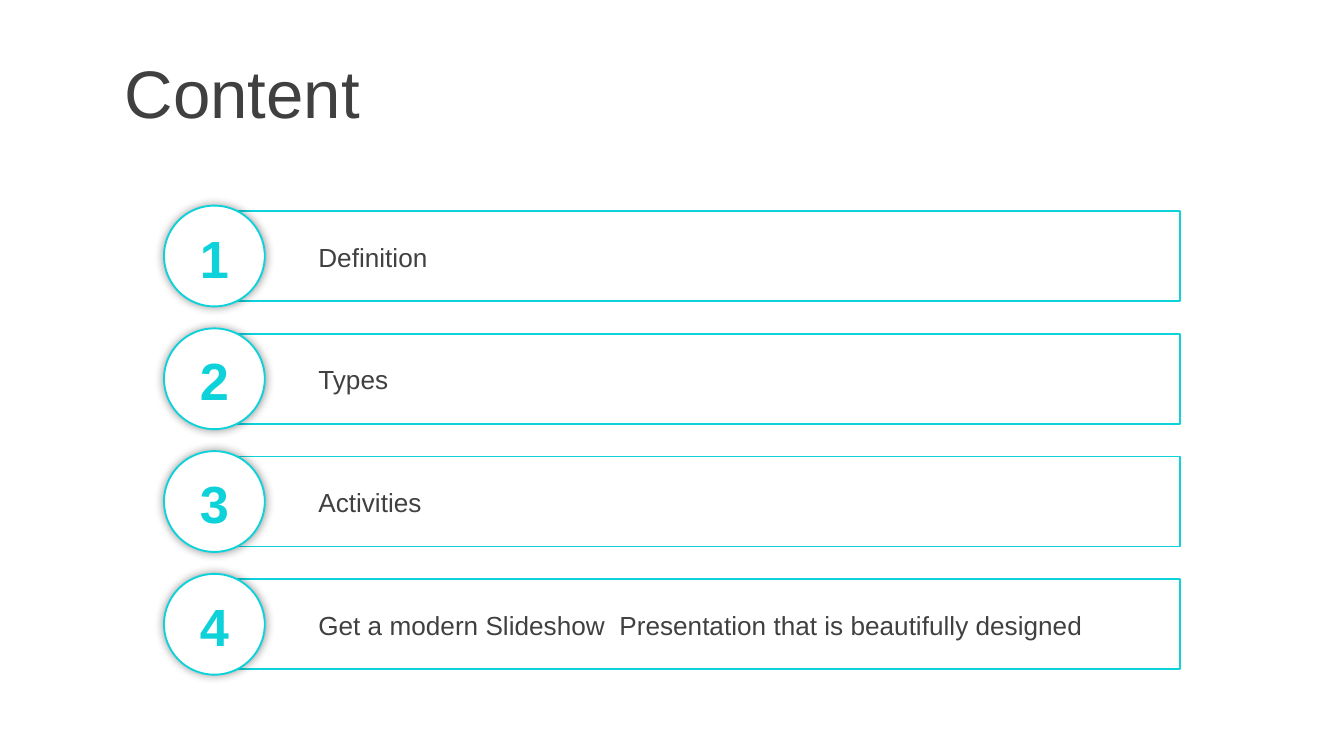
from lxml import etree
from pptx import Presentation
from pptx.dml.color import RGBColor
from pptx.enum import shapes, text
from pptx.oxml import ns
from pptx.util import Inches, Pt

FONT, DARK, CYAN = "Arial", "404040", "0DD2D9"
ITEMS = ["Definition", "Types", "Activities",
         "Get a modern Slideshow  Presentation that is beautifully designed"]


def color(value):
    return RGBColor.from_string(value)


def add_text(s, x, y, w, h, content, size, fill=DARK, bold=False, align=None):
    sp = s.shapes.add_textbox(Inches(x), Inches(y), Inches(w), Inches(h))
    tf = sp.text_frame
    tf.word_wrap = True
    tf.vertical_anchor = text.MSO_ANCHOR.MIDDLE
    tf.text = content
    p = tf.paragraphs[0]
    p.alignment = align
    font = p.runs[0].font
    font.name, font.size, font.bold = FONT, Pt(size), bold
    font.color.rgb = color(fill)


def add_outline(s, kind, x, y, w, h, fill=None):
    sp = s.shapes.add_shape(kind, Inches(x), Inches(y), Inches(w), Inches(h))
    sp.shadow.inherit = False
    if fill:
        sp.fill.solid()
        sp.fill.fore_color.rgb = color(fill)
    else:
        sp.fill.background()
    sp.line.color.rgb = color(CYAN)
    sp.line.width = Pt(1)
    return sp


def add_glow_shadow(sp, blur, opacity):
    """Put an even, undisplaced black shadow around the shape."""
    effects = sp._element.spPr.find(ns.qn("a:effectLst"))
    shadow = etree.SubElement(effects, ns.qn("a:outerShdw"), blurRad=str(Pt(blur)),
                              dist="0", dir="0", algn="ctr", rotWithShape="0")
    black = etree.SubElement(shadow, ns.qn("a:srgbClr"), val="000000")
    etree.SubElement(black, ns.qn("a:alpha"), val=str(opacity * 1000))


def add_item(s, x, y, w, h, number, label):
    """Draw a numbered circle, h across, overlapping a labelled bar."""
    add_outline(s, shapes.MSO_SHAPE.RECTANGLE, x + 0.37, y + 0.04, w - 0.37, h - 0.08)
    add_text(s, x + 1.05, y + 0.21, w - 1.28, 0.34, label, 14)
    circle = add_outline(s, shapes.MSO_SHAPE.OVAL, x, y, h, h, "FFFFFF")
    add_glow_shadow(circle, 5, 40)
    add_text(s, x + 0.14, y + 0.1, h - 0.28, 0.57, str(number), 28, CYAN, True,
             text.PP_ALIGN.CENTER)


def add_agenda(s, x, y, w, h):
    item_h = 0.75
    pitch = (h - item_h) / (len(ITEMS) - 1)
    for i, label in enumerate(ITEMS):
        add_item(s, x, y + i * pitch, w, item_h, i + 1, label)


def main():
    prs = Presentation()
    prs.slide_width = Inches(10)
    prs.slide_height = Inches(10 * 9 / 16)
    s = prs.slides.add_slide(prs.slide_layouts[6])
    add_text(s, 0.83, 0.37, 9.17, 0.63, "Content", 36)
    add_agenda(s, 1.22, 1.53, 7.56, 3.49)
    prs.save("out.pptx")


if __name__ == "__main__":
    main()
